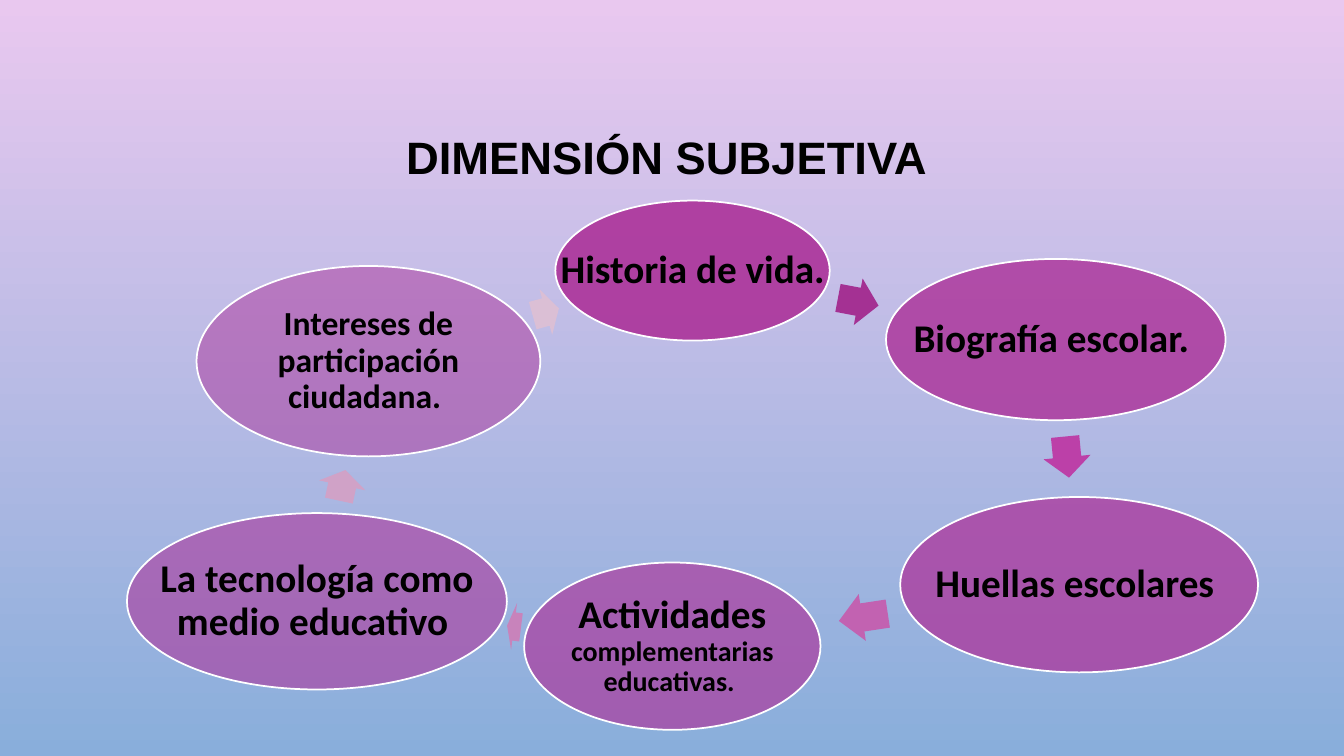
import pptx
import pptx.dml.color
import pptx.enum.shapes
import pptx.enum.text
import pptx.oxml
import pptx.oxml.ns
import pptx.util

Pt = pptx.util.Pt
SHAPE = pptx.enum.shapes.MSO_SHAPE

# Content: all places are left, top, width, height in points
TITLE = "DIMENSIÓN SUBJETIVA "
TITLE_BOX = (72, 49, 816, 126)

# Each stage: place, runs of (text, size name)
STAGES = [
    ((396.7, 143.3, 196, 100), [("Historia de vida. ", "large")]),
    ((632.9, 185, 242.6, 115.2), [("Biografía escolar. ", "large")]),
    ((643, 355, 255.6, 125.3), [("Huellas escolares ", "large")]),
    ((374.4, 401.8, 211.7, 119.5),
     [("Actividades", "large"), (" ", "mid"),
      ("complementarias educativas. ", "small")]),
    ((90.7, 366.5, 271.4, 126), [("La tecnología como medio educativo ", "large")]),
    ((140.4, 190, 245.5, 136), [("Intereses de participación ciudadana. ", "mid")]),
]

# Arrow after each stage: left, top, length, turn, colour
ARROWS = [
    (598.3, 198.7, 29.5, 10.7, "A43193"),
    (747.4, 309.6, 29.5, 84.5, "BC40A8"),
    (599, 424, 35.3, 171.4, "C262B1"),
    (362.2, 430.6, 10, 187.2, "C883BB"),
    (233.3, 329.8, 22.3, 282.1, "D0A2C7"),
    (380.2, 206, 19.4, 344.4, "DBBFD5"),
]
BREADTH = 33.8

THEME = {
    "top": "E9C8EF", "base": "89AEDB", "oval": "AC339A",
    "edge": "FFFFFF", "ink": "000000",
    "head": "Arial", "body": "Calibri",
    "title": 32.4, "large": 28, "mid": 24, "small": 20,
}


def color(code):
    return pptx.dml.color.RGBColor.from_string(code)


def add_shape(slide, kind, box, fill):
    shape = slide.shapes.add_shape(kind, *map(Pt, box))
    shape.shadow.inherit = False
    shape.fill.solid()
    shape.fill.fore_color.rgb = color(fill)
    shape.line.fill.background()
    return shape


def add_text(slide, box, runs, face, inset, space):
    frame = slide.shapes.add_textbox(*map(Pt, box)).text_frame
    frame.word_wrap = True
    frame.vertical_anchor = pptx.enum.text.MSO_ANCHOR.MIDDLE
    frame.margin_left = frame.margin_right = Pt(inset)
    frame.margin_top = frame.margin_bottom = Pt(inset)
    para = frame.paragraphs[0]
    para.alignment = pptx.enum.text.PP_ALIGN.CENTER
    para.line_spacing = space
    para.font.name = THEME[face]
    para.font.bold = True
    para.font.color.rgb = color(THEME["ink"])
    para.font.size = Pt(THEME[runs[0][1]])
    for text, size in runs:
        run = para.add_run()
        run.text = text
        if len(runs) > 1:
            run.font.size = Pt(THEME[size])


def add_oval(slide, box, alpha):
    oval = add_shape(slide, SHAPE.OVAL, box, THEME["oval"])
    oval.line.color.rgb = color(THEME["edge"])
    oval.line.width = Pt(1.25)
    tint = oval.fill._xPr.find(".//" + pptx.oxml.ns.qn("a:srgbClr"))
    tint.append(pptx.oxml.parse_xml(
        f'<a:alpha {pptx.oxml.ns.nsdecls("a")} val="{alpha * 1000}"/>'))


def add_arrow(slide, left, top, length, turn, fill):
    arrow = add_shape(slide, SHAPE.RIGHT_ARROW, (left, top, length, BREADTH), fill)
    arrow.adjustments[0] = 0.6
    arrow.adjustments[1] = 0.5
    arrow.rotation = turn


def main():
    deck = pptx.Presentation()
    deck.slide_width, deck.slide_height = Pt(960), Pt(540)
    slide = deck.slides.add_slide(deck.slide_layouts[6])

    # Background runs from top to bottom
    back = slide.background.fill
    back.gradient()
    back.gradient_angle = 270
    for stop, name, place in zip(back.gradient_stops, ("top", "base"), (0, 1)):
        stop.color.rgb = color(THEME[name])
        stop.position = place

    # Title
    add_text(slide, TITLE_BOX, [(TITLE, "title")], "head", 3.6, 1)

    # Cycle: each oval is fainter than the last
    for step, ((box, runs), arrow) in enumerate(zip(STAGES, ARROWS)):
        add_oval(slide, box, 90 - 8 * step)
        add_text(slide, box, runs, "body", 2.5, 0.9)
        add_arrow(slide, *arrow)

    deck.save("out.pptx")


if __name__ == "__main__":
    main()
